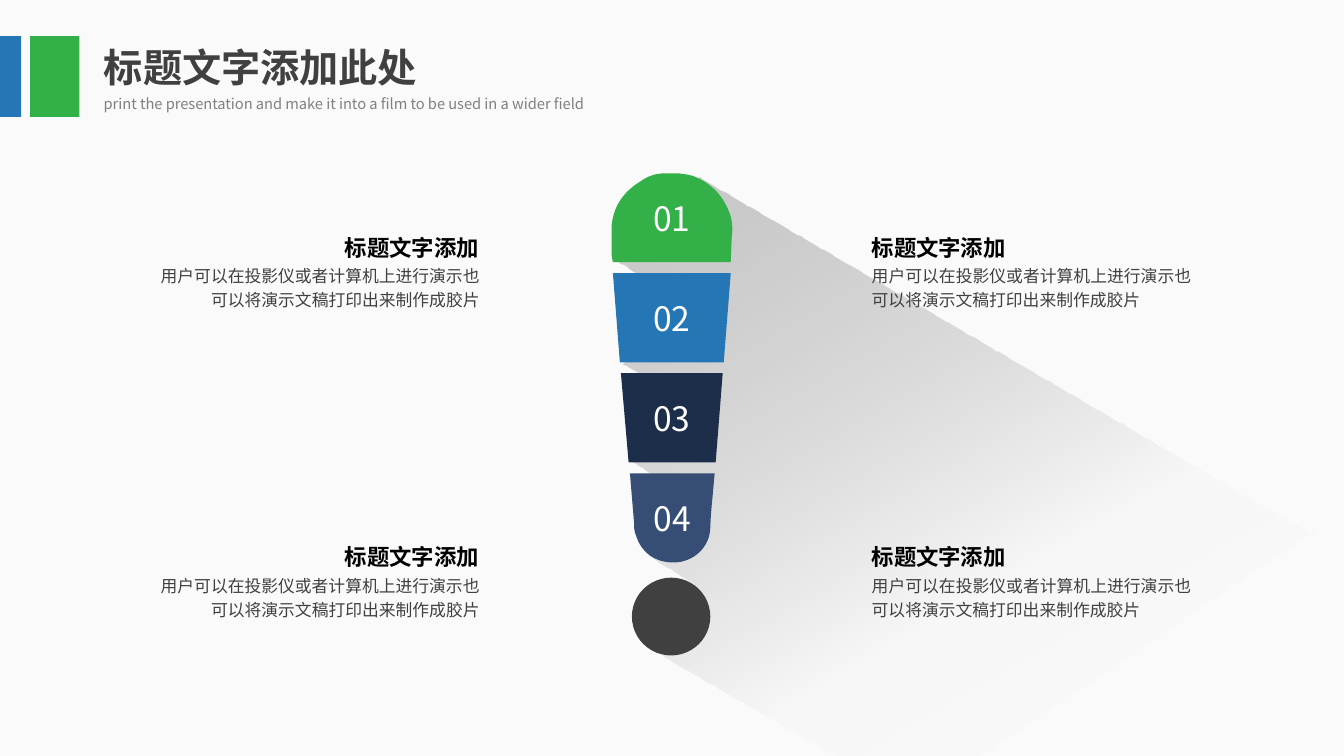
from lxml import etree
from pptx import Presentation
from pptx.dml.color import RGBColor
from pptx.enum.shapes import MSO_SHAPE
from pptx.enum.text import MSO_ANCHOR, MSO_AUTO_SIZE, PP_ALIGN
from pptx.oxml import parse_xml
from pptx.oxml.ns import qn
from pptx.util import Pt

RECT, OVAL = MSO_SHAPE.RECTANGLE, MSO_SHAPE.OVAL
TOP, MIDDLE = MSO_ANCHOR.TOP, MSO_ANCHOR.MIDDLE
LEFT, RIGHT, CENTER, FULL = (PP_ALIGN.LEFT, PP_ALIGN.RIGHT,
                             PP_ALIGN.CENTER, PP_ALIGN.JUSTIFY)
FIXED = MSO_AUTO_SIZE.NONE
FONT = "Noto Sans CJK SC"
NS = "http://schemas.openxmlformats.org/drawingml/2006/main"
COLORS = {"page": "FAFAFA", "green": "33B048", "blue": "2576B5",
          "navy": "1D2E4B", "slate": "364D76", "dark": "404040",
          "gray": "808080", "black": "000000", "white": "FFFFFF",
          "pale": "F2F2F2"}

TITLE = "标题文字添加此处"
SUB = "print the presentation and make it into a film to be used in a wider field"
HEAD = "标题文字添加"
BODY = "用户可以在投影仪或者计算机上进行演示也可以将演示文稿打印出来制作成胶片"

# Left edge of body, left edge of heading, alignment
SIDES = [(107.3, 188, RIGHT), (615.6, 615.6, FULL)]
ROWS = [159.8, 380.9]

# Bars: left, width, colour
BARS = [(21.6, 35.1, "green"), (0, 15.2, "blue")]

# Position in percent, colour, opacity in percent
FADE = [(0, "black", 20), (61, "pale", 34), (100, "pale", 0)]
SHADOW = [(939, 383), (939, 378), (652.3, 571.7), (473, 468), (496, 417),
          (463.7, 396.7), (481, 349.2), (450.7, 328.3), (486.7, 283),
          (445, 260), (481.7, 213), (439.2, 185), (499.7, 126.7)]

# Each step is one point for a line, or three for a curve
CAP = [[(475.9, 123.8)],
       [(478.8, 123.8), (481.7, 123.8), (484.6, 123.8)],
       [(488.9, 124.6), (493.2, 124.6), (497.5, 126.7)],
       [(509, 131.8), (516.9, 140.4), (521.3, 152.6)],
       [(523.4, 158.4), (523.4, 164.2), (522.7, 169.9)],
       [(522, 187.2)], [(437.8, 187.2)], [(437, 182.9)], [(437, 160.6)],
       [(438.5, 146.2), (446.4, 136.1), (458.6, 128.9)],
       [(463.7, 125.3), (469.4, 123.8), (475.9, 123.8)]]
UPPER = [[(437.8, 195.1)], [(522, 195.1)], [(517, 258.8)], [(442.8, 258.8)]]
LOWER = [[(443.5, 265.2 + 1.4)], [(516.2, 266.6)], [(511.2, 330.3)], [(449, 330.3)]]
TIP = [[(450, 338.2)], [(510.5, 338.2)], [(509, 355)],
       [(508.3, 362.2), (507.6, 369.4), (507.4, 377.3)],
       [(506.9, 391), (495.4, 401.8), (481, 401.8)],
       [(468, 401.8), (457.9, 394.6), (454.3, 382.3)],
       [(452.9, 379.4), (452.9, 375.8), (452.9, 373)]]
PARTS = [("01", CAP, "green"), ("02", UPPER, "blue"),
         ("03", LOWER, "navy"), ("04", TIP, "slate")]
DOT = (451.4, 412.6, 56, 55.6)


def rgb(name):
    return RGBColor.from_string(COLORS[name])


def trace(steps, count=16):
    """Turn lines and cubic curves into a list of points."""
    dots = []
    for step in steps:
        if len(step) == 1:
            dots += step
            continue
        ends = [dots[-1], *step]
        for i in range(1, count + 1):
            t = i / count
            u = 1 - t
            mix = (u ** 3, 3 * u * u * t, 3 * u * t * t, t ** 3)
            dots.append(tuple(sum(m * p[k] for m, p in zip(mix, ends))
                              for k in (0, 1)))
    return dots


def plain(shape, color):
    shape.shadow.inherit = False
    shape.fill.solid()
    shape.fill.fore_color.rgb = rgb(color)
    shape.line.fill.background()


def outline(dots, color):
    pts = [(Pt(x), Pt(y)) for x, y in dots]
    path = slide.shapes.build_freeform(*pts[0])
    path.add_line_segments(pts[1:], close=True)
    shape = path.convert_to_shape()
    plain(shape, color)
    return shape


def fade(shape):
    """Replace the solid fill by a gradient with transparency."""
    stops = "".join(
        f'<a:gs pos="{pos * 1000}"><a:srgbClr val="{COLORS[name]}">'
        f'<a:alpha val="{part * 1000}"/></a:srgbClr></a:gs>'
        for pos, name, part in FADE)
    grad = parse_xml(f'<a:gradFill xmlns:a="{NS}" rotWithShape="1"><a:gsLst>'
                     f'{stops}</a:gsLst><a:lin ang="3600000" scaled="0"/>'
                     '</a:gradFill>')
    props = shape.element.spPr
    props.replace(props.find(qn("a:solidFill")), grad)


def write(shape, text, size, color, align=LEFT, bold=False, gap=1.0, anchor=TOP):
    frame = shape.text_frame
    frame.text = text
    frame.word_wrap = True
    frame.auto_size = FIXED
    frame.vertical_anchor = anchor
    para = frame.paragraphs[0]
    para.alignment = align
    para.line_spacing = gap
    run = para.runs[0]
    font = run.font
    font.size, font.bold, font.name = Pt(size), bold, FONT
    font.color.rgb = rgb(color)
    east = etree.Element(qn("a:ea"), typeface=FONT)
    run.font._element.find(qn("a:latin")).addnext(east)


def label(box, *args, **style):
    write(slide.shapes.add_textbox(*map(Pt, box)), *args, **style)


deck = Presentation()
deck.slide_width, deck.slide_height = Pt(960), Pt(540)
slide = deck.slides.add_slide(deck.slide_layouts[5])
slide.background.fill.solid()
slide.background.fill.fore_color.rgb = rgb("page")

title = slide.shapes.title
title.left, title.top, title.width, title.height = map(Pt, (67, 27.4, 259, 41))
write(title, TITLE, 28, "dark", bold=True)
label((67, 61.9, 384.5, 21.6), SUB, 10.5, "gray", gap=1.2)
for left, width, color in BARS:
    bar = slide.shapes.add_shape(RECT, Pt(left), Pt(25.9), Pt(width), Pt(57.6))
    plain(bar, color)

fade(outline(SHADOW, "pale"))
for text, steps, color in PARTS:
    write(outline(trace(steps), color), text, 24, "white",
          align=CENTER, anchor=MIDDLE)
plain(slide.shapes.add_shape(OVAL, *map(Pt, DOT)), "dark")

for left, start, align in SIDES:
    for top in ROWS:
        label((left, top + 23.8, 242.6, 42.5), BODY, 12, "dark",
              align=align, gap=1.2)
        label((start, top, 161.3, 28.8), HEAD, 16, "black",
              align=align, bold=True, gap=1.2)

deck.save("out.pptx")
